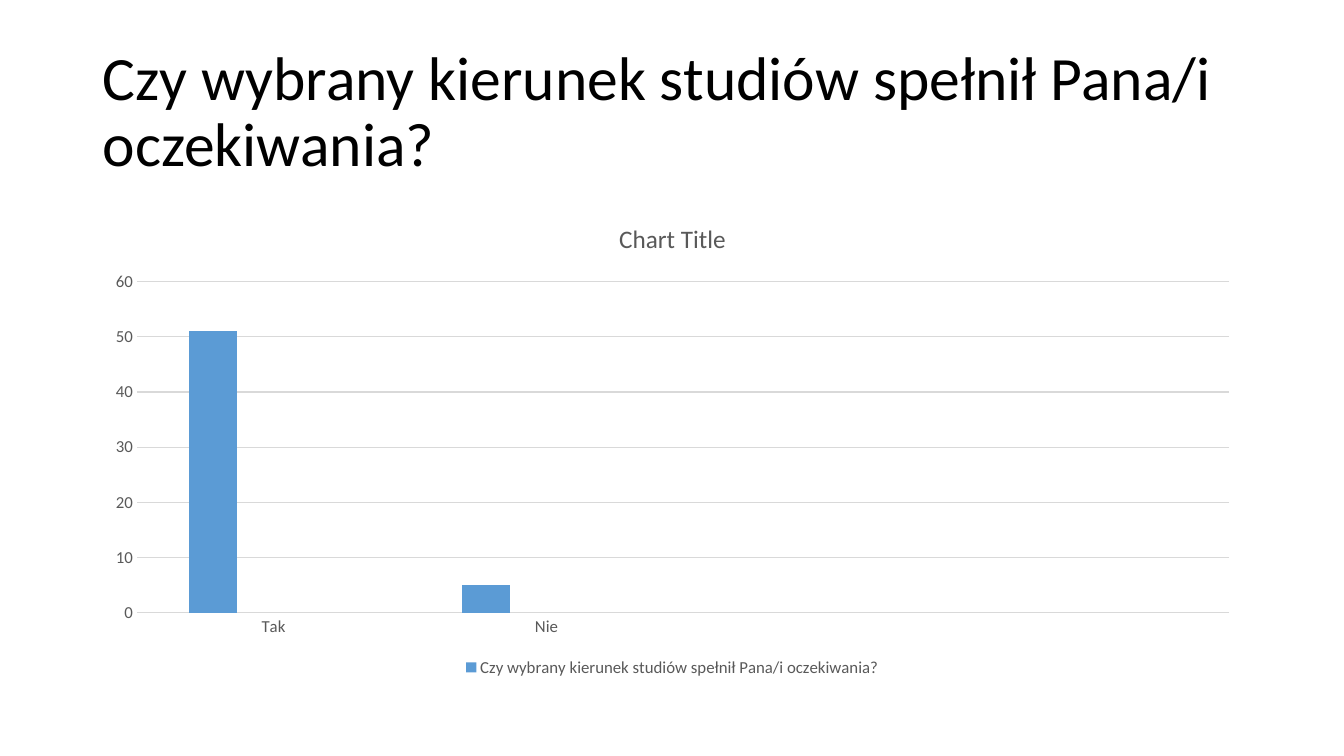
"""Build a survey slide with a title and a column chart."""
from dataclasses import dataclass
from typing import Any

from lxml import etree
from pptx import Presentation
from pptx.chart.data import CategoryChartData
from pptx.dml.color import RGBColor
from pptx.enum.chart import XL_CHART_TYPE, XL_LEGEND_POSITION, XL_TICK_MARK
from pptx.enum.text import MSO_ANCHOR, MSO_AUTO_SIZE, PP_ALIGN
from pptx.oxml.ns import qn
from pptx.util import Inches, Pt

COLUMN = XL_CHART_TYPE.COLUMN_CLUSTERED
BOTTOM = XL_LEGEND_POSITION.BOTTOM
NO_TICK = XL_TICK_MARK.NONE
MIDDLE = MSO_ANCHOR.MIDDLE
NO_FIT = MSO_AUTO_SIZE.NONE
LEFT = PP_ALIGN.LEFT

FONT = "Calibri"
BLACK, GREY, PALE = "000000", "595959", "D9D9D9"
ASK = "Czy wybrany kierunek studiów spełnił Pana/i oczekiwania?"
EDGE, WIDTH = Inches(0.92), Inches(11.5)


@dataclass
class Series:
    """Name, values and fill of one chart series."""
    name: str
    vals: tuple[int | None, ...]
    fill: str


BLANK = (None,) * 4
CATS = ("Tak", "Nie", "", "")
SERIES = (
    Series(ASK, (51, 5, None, None), "5B9BD5"),
    Series("Series 2", BLANK, "ED7D31"),
    Series("Series 3", BLANK, "A5A5A5"),
)


def apply(item: Any, form: dict[str, Any]) -> None:
    """Set every attribute named in the format."""
    for key, val in form.items():
        setattr(item, key, val)


def paint(part: Any, tint: str) -> None:
    """Give a fill a solid colour from a hex string."""
    part.solid()
    part.fore_color.rgb = RGBColor.from_string(tint)


def style(font: Any, size: float, tint: str) -> None:
    """Set the face, size and colour of a font."""
    apply(font, {"name": FONT, "size": Pt(size), "bold": False})
    paint(font.fill, tint)


def rule(line: Any) -> None:
    """Draw a thin pale line."""
    line.width = Pt(0.75)
    paint(line.fill, PALE)


def add_title(slide: Any) -> None:
    """Place the question in the title placeholder."""
    title = slide.shapes.title
    apply(title, {"left": EDGE, "top": Inches(0.4),
                  "width": WIDTH, "height": Inches(1.45)})
    frame = title.text_frame
    frame.text = ASK
    apply(frame, {"vertical_anchor": MIDDLE, "word_wrap": True,
                  "auto_size": NO_FIT})
    para = frame.paragraphs[0]
    apply(para, {"alignment": LEFT, "line_spacing": 0.9})
    style(para.runs[0].font, 44, BLACK)


def add_legend(chart: Any) -> None:
    """Show only the first series in a legend at the bottom."""
    chart.has_legend = True
    legend = chart.legend
    apply(legend, {"position": BOTTOM, "include_in_layout": False})
    style(legend.font, 12, GREY)
    node = chart.element.find(f".//{qn('c:legend')}")
    for spot in range(1, len(SERIES)):
        entry = etree.Element(qn("c:legendEntry"))
        etree.SubElement(entry, qn("c:idx")).set("val", str(spot))
        etree.SubElement(entry, qn("c:delete")).set("val", "1")
        node.insert(spot, entry)


def add_axes(chart: Any) -> None:
    """Format both axes and the grid."""
    form = {"major_tick_mark": NO_TICK, "minor_tick_mark": NO_TICK}
    for axis in (chart.category_axis, chart.value_axis):
        apply(axis, form)
        style(axis.tick_labels.font, 12, GREY)
    rule(chart.category_axis.format.line)
    axis = chart.value_axis
    apply(axis, {"minimum_scale": 0, "maximum_scale": 60, "major_unit": 10})
    axis.format.line.fill.background()
    rule(axis.major_gridlines.format.line)


def add_columns(slide: Any) -> None:
    """Add the column chart with its title, axes and legend."""
    data = CategoryChartData()
    data.categories = CATS
    for item in SERIES:
        data.add_series(item.name, item.vals)
    chart = slide.shapes.add_chart(
        COLUMN, EDGE, Inches(2), WIDTH, Inches(4.76), data).chart
    style(chart.font, 10, BLACK)
    chart.has_title = True
    frame = chart.chart_title.text_frame
    frame.text = "Chart Title"
    style(frame.paragraphs[0].runs[0].font, 18, GREY)
    plot = chart.plots[0]
    apply(plot, {"gap_width": 219, "overlap": -27, "vary_by_categories": False})
    for bars, item in zip(plot.series, SERIES):
        paint(bars.format.fill, item.fill)
    add_axes(chart)
    add_legend(chart)


def main() -> None:
    """Build and save the slide."""
    deck = Presentation()
    apply(deck, {"slide_width": Inches(13.33), "slide_height": Inches(7.5)})
    slide = deck.slides.add_slide(deck.slide_layouts[5])
    paint(slide.background.fill, "FFFFFF")
    add_title(slide)
    add_columns(slide)
    deck.save("out.pptx")


if __name__ == "__main__":
    main()
